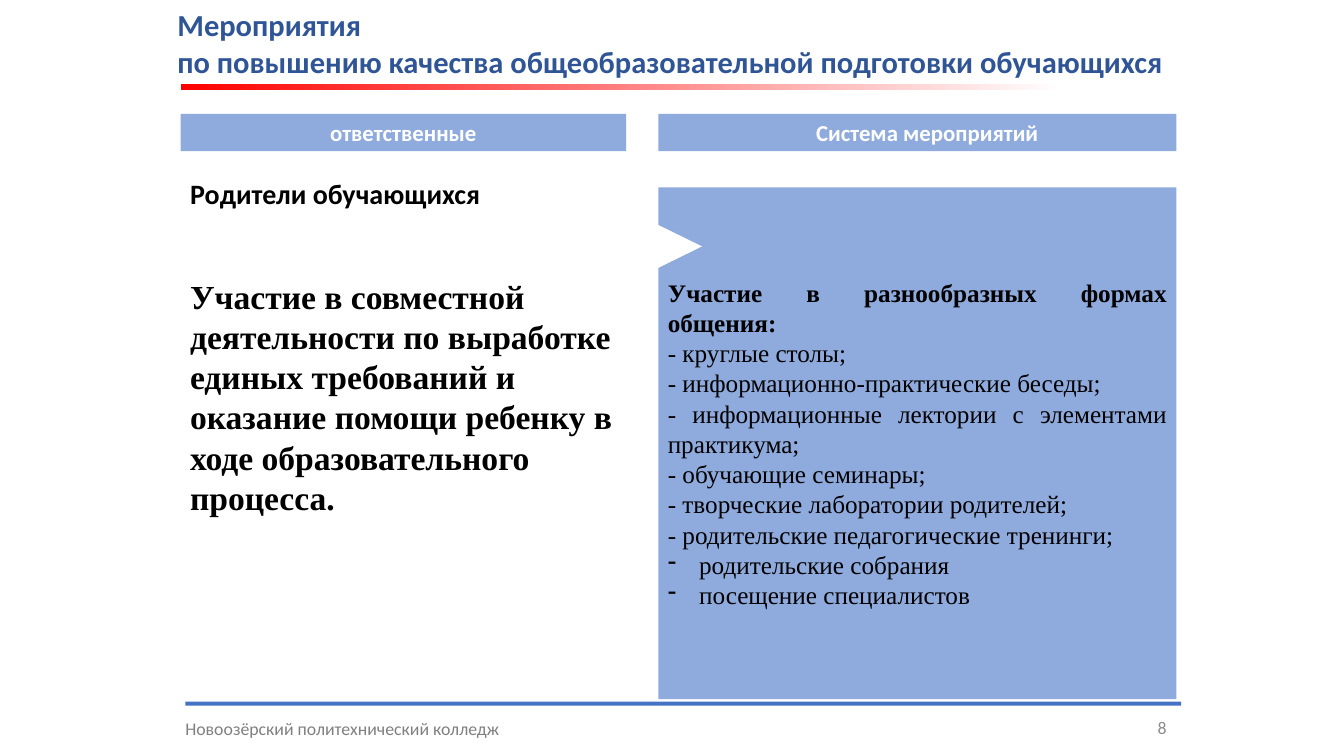
"""Build the slide on measures for parents of students."""
from lxml import etree
from pptx import Presentation
from pptx.dml.color import RGBColor
from pptx.enum.shapes import MSO_SHAPE
from pptx.enum.text import MSO_ANCHOR, PP_ALIGN
from pptx.oxml.ns import qn
from pptx.util import Cm, Pt

RECTANGLE, TRIANGLE = MSO_SHAPE.RECTANGLE, MSO_SHAPE.ISOSCELES_TRIANGLE
TOP, MIDDLE = MSO_ANCHOR.TOP, MSO_ANCHOR.MIDDLE
LEFT, CENTER, RIGHT, JUSTIFY = PP_ALIGN.LEFT, PP_ALIGN.CENTER, PP_ALIGN.RIGHT, PP_ALIGN.JUSTIFY
SANS, SERIF = "Calibri", "Times New Roman"
BLACK = RGBColor(0x00, 0x00, 0x00)
WHITE = RGBColor(0xFF, 0xFF, 0xFF)
RED = RGBColor(0xFF, 0x00, 0x00)
PALE_BLUE = RGBColor(0x8F, 0xAA, 0xDC)
BLUE = RGBColor(0x44, 0x72, 0xC4)
DARK_BLUE = RGBColor(0x2F, 0x55, 0x97)
GREY = RGBColor(0x80, 0x80, 0x80)
LIGHT_GREY = RGBColor(0x8C, 0x8C, 0x8C)

LEFT_X, LEFT_WIDTH = 4.55, 11.23
RIGHT_X, RIGHT_WIDTH = 16.59, 13.06
FOOTER_X, FOOTER_Y = 4.67, 17.81

deck = Presentation()
deck.slide_width, deck.slide_height = Cm(33.87), Cm(19.05)
page = deck.slides.add_slide(deck.slide_layouts[6])


def add_block(place, fill=None, outline=RECTANGLE, anchor=TOP, margins=(0.24, 0.24)):
    """Add a filled shape, or a text box when there is no fill."""
    sizes = [Cm(length) for length in place]
    if fill is None:
        block = page.shapes.add_textbox(*sizes)
    else:
        block = page.shapes.add_shape(outline, *sizes)
        block.shadow.inherit = False
        block.line.fill.background()
        block.fill.solid()
        block.fill.fore_color.rgb = fill
    frame = block.text_frame
    frame.word_wrap = True
    frame.vertical_anchor = anchor
    frame.margin_left, frame.margin_right = [Cm(margin) for margin in margins]
    frame.margin_top = frame.margin_bottom = Cm(0.13)
    return block


def add_line(box, text, color, align=LEFT, **formats):
    """Write one paragraph, using the empty first one when it is free."""
    frame = box.text_frame
    para = frame.paragraphs[0]
    if para.runs:
        para = frame.add_paragraph()
    para.alignment = align
    span = para.add_run()
    span.text = text
    span.font.color.rgb = color
    for name, value in formats.items():
        setattr(span.font, name, value)
    return para


measures = add_block((RIGHT_X, 4.72, RIGHT_WIDTH, 12.9), PALE_BLUE, anchor=MIDDLE)
measure_format = {"name": SERIF, "size": Pt(18)}
add_line(measures, "Участие в разнообразных формах общения:", BLACK, JUSTIFY, bold=True, **measure_format)
for text in (
    "- круглые столы;",
    "- информационно-практические беседы;",
    "- информационные лектории с элементами практикума;",
    "- обучающие семинары;",
    "- творческие лаборатории родителей;",
    "- родительские педагогические тренинги;",
):
    add_line(measures, text, BLACK, JUSTIFY, **measure_format)
for text in ("родительские собрания", "посещение специалистов"):
    para = add_line(measures, text, BLACK, **measure_format)
    properties = para._p.get_or_add_pPr()
    properties.set("marL", str(Cm(0.79)))
    properties.set("indent", str(-Cm(0.79)))
    etree.SubElement(properties, qn("a:buChar")).set("char", "-")

notch = add_block((16.56, 5.64, 1.12, 1.14), WHITE, TRIANGLE)
notch.rotation = 90

for text, left, width, margin in (
    ("ответственные", LEFT_X, LEFT_WIDTH, 0.24),
    ("Система мероприятий", RIGHT_X, RIGHT_WIDTH, 0.74),
):
    header = add_block((left, 2.87, width, 0.94), PALE_BLUE, margins=(margin, 0.24))
    add_line(header, text, WHITE, CENTER, name=SANS, size=Pt(16.3), bold=True)

footer = add_block((FOOTER_X, FOOTER_Y, 8.86, 1.09), anchor=MIDDLE, margins=(0, 0.25))
add_line(footer, "Новоозёрский политехнический колледж", GREY, name=SANS, size=Pt(12.7))
number = add_block((23.93, FOOTER_Y, 5.72, 1.02), anchor=MIDDLE, margins=(0.25, 0.25))
add_line(number, "8", LIGHT_GREY, RIGHT, name=SANS, size=Pt(12.7))

title_rule = add_block((LEFT_X, 2.13, 22.23, 0.13), RED)
title_rule.fill.gradient()
title_rule.fill.gradient_angle = 0
for stop, position, color in zip(title_rule.fill.gradient_stops, (0, 1), (RED, WHITE)):
    stop.position = position
    stop.color.rgb = color
add_block((FOOTER_X, 17.68, 25.1, 0.1), BLUE)

parents = add_block((LEFT_X, 4.32, LEFT_WIDTH, 8.84))
add_line(parents, "Родители обучающихся", BLACK, name=SANS, size=Pt(20), bold=True)
duty = add_line(
    parents,
    "Участие в совместной деятельности по выработке единых требований "
    "и оказание помощи ребенку в ходе образовательного процесса.",
    BLACK, name=SERIF, size=Pt(24), bold=True,
)
duty.space_before = Pt(46.6)

title = add_block((4.22, 0.03, 26.04, 3.05), margins=(0.25, 0.25))
for text in ("Мероприятия", "по повышению качества общеобразовательной подготовки обучающихся"):
    add_line(title, text, DARK_BLUE, name=SANS, size=Pt(21.8), bold=True)

deck.save("out.pptx")
